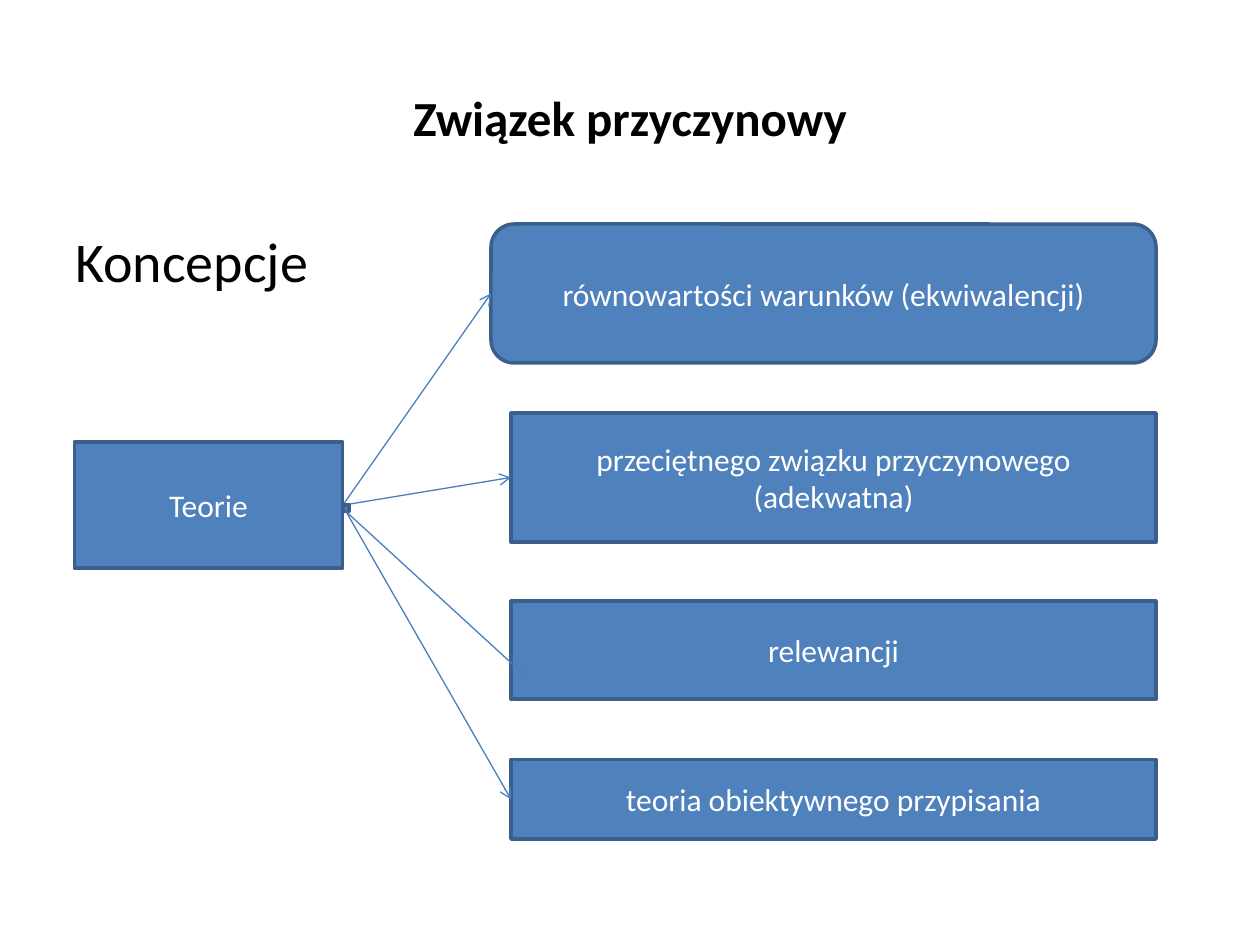
from dataclasses import dataclass

from lxml.etree import SubElement
from pptx import Presentation
from pptx.dml.color import RGBColor
from pptx.enum.shapes import MSO_CONNECTOR, MSO_SHAPE
from pptx.enum.text import MSO_ANCHOR, PP_ALIGN
from pptx.oxml.ns import qn
from pptx.shapes.base import BaseShape
from pptx.slide import Slide
from pptx.text.text import TextFrame
from pptx.util import Pt

FONT = "Calibri"
BLACK, WHITE = "000000", "FFFFFF"
FILL, OUTLINE, ARROW = "4F81BD", "3A5F8C", "4B7EBC"


@dataclass
class Box:
    left: float
    top: float
    width: float
    height: float
    text: str = ""
    preset: MSO_SHAPE = MSO_SHAPE.RECTANGLE

    @property
    def left_middle(self) -> tuple[float, float]:
        return self.left, self.top + self.height / 2

    @property
    def right_middle(self) -> tuple[float, float]:
        return self.left + self.width, self.top + self.height / 2


def color(value: str) -> RGBColor:
    return RGBColor.from_string(value)


def write(frame: TextFrame, text: str, size: float, ink: str,
          align: PP_ALIGN = PP_ALIGN.CENTER,
          anchor: MSO_ANCHOR = MSO_ANCHOR.MIDDLE, bold: bool = False) -> None:
    frame.word_wrap = True
    frame.vertical_anchor = anchor
    para = frame.paragraphs[0]
    para.text = text
    para.alignment = align
    para.font.name = FONT
    para.font.size = Pt(size)
    para.font.bold = bold
    para.font.color.rgb = color(ink)


def add_text(page: Slide, box: Box) -> TextFrame:
    return page.shapes.add_textbox(
        Pt(box.left), Pt(box.top), Pt(box.width), Pt(box.height)).text_frame


def add_box(page: Slide, box: Box) -> BaseShape:
    shape = page.shapes.add_shape(
        box.preset, Pt(box.left), Pt(box.top), Pt(box.width), Pt(box.height))
    shape.shadow.inherit = False
    shape.fill.solid()
    shape.fill.fore_color.rgb = color(FILL)
    shape.line.color.rgb = color(OUTLINE)
    shape.line.width = Pt(2)
    if box.text:
        write(shape.text_frame, box.text, 18, WHITE)
    return shape


def add_arrow(page: Slide, start: tuple[float, float],
              end: tuple[float, float]) -> None:
    arrow = page.shapes.add_connector(
        MSO_CONNECTOR.STRAIGHT, *(Pt(value) for value in (*start, *end)))
    arrow.line.color.rgb = color(ARROW)
    arrow.line.width = Pt(0.75)
    SubElement(arrow.line._get_or_add_ln(), qn("a:tailEnd"), type="arrow")
    SubElement(arrow._element.spPr, qn("a:effectLst"))


def main() -> None:
    deck = Presentation()
    deck.slide_width, deck.slide_height = Pt(720), Pt(540)
    page = deck.slides.add_slide(deck.slide_layouts[6])

    title = add_text(page, Box(36, 21.6, 648, 90))
    write(title, "Związek przyczynowy", 28, BLACK, bold=True)
    body = add_text(page, Box(36, 126, 648, 356.4))
    write(body, "Koncepcje", 32, BLACK, PP_ALIGN.LEFT, MSO_ANCHOR.TOP)

    source = Box(42.5, 252.7, 153.4, 72, "Teorie")
    equivalence = Box(280.6, 128, 380, 79.4,
                      "równowartości warunków (ekwiwalencji)",
                      MSO_SHAPE.ROUNDED_RECTANGLE)
    adequacy = Box(292, 236, 368.6, 73.7,
                   "przeciętnego związku przyczynowego (adekwatna)")
    relevance = Box(292, 343.6, 368.6, 56, "relewancji")
    attribution = Box(292, 434, 368.6, 45.5, "teoria obiektywnego przypisania")
    for box in (source, equivalence, adequacy, relevance, attribution):
        add_box(page, box)

    for target in (equivalence, adequacy):
        add_arrow(page, source.right_middle, target.left_middle)

    node = Box(*source.right_middle, 3.6, 3.6)
    add_box(page, node)
    node_bottom = node.left + node.width / 2, node.top + node.height
    for end in ((303, 388.8), attribution.left_middle):
        add_arrow(page, node_bottom, end)

    deck.save("out.pptx")


if __name__ == "__main__":
    main()
